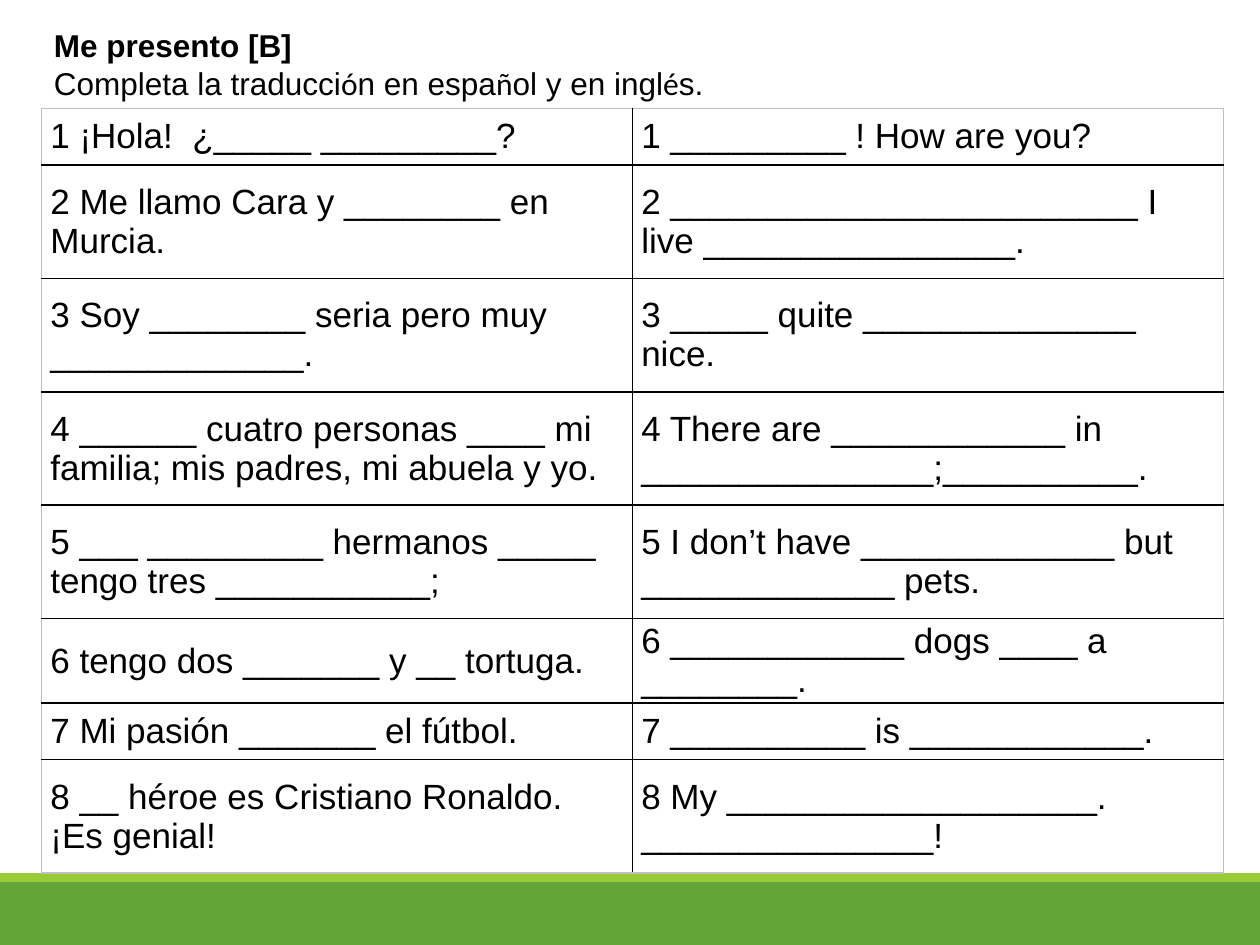
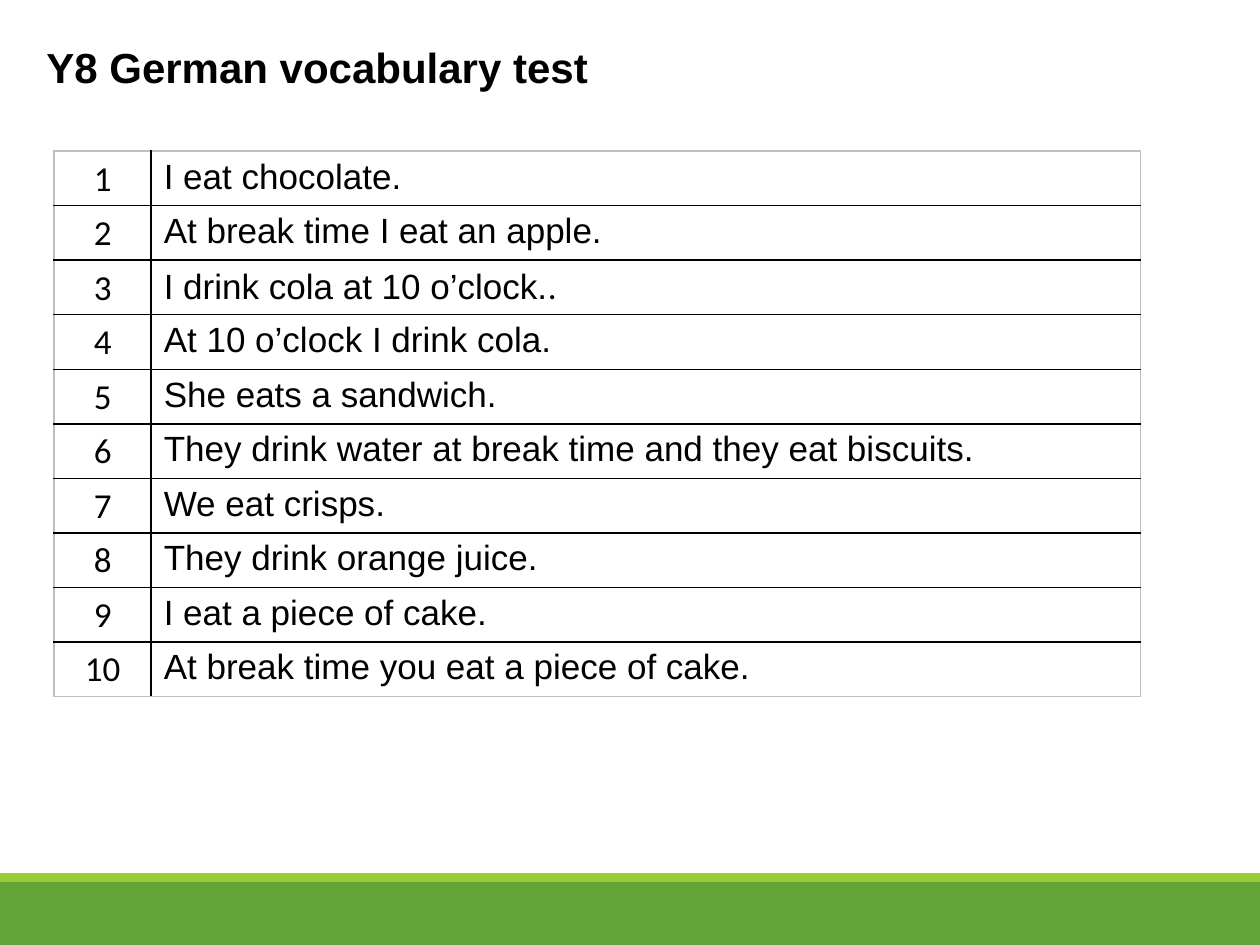
from lxml import etree
from pptx import Presentation
from pptx.dml.color import RGBColor
from pptx.enum.shapes import MSO_SHAPE
from pptx.enum.text import MSO_ANCHOR, MSO_AUTO_SIZE, PP_ALIGN
from pptx.oxml.ns import qn
from pptx.util import Inches, Pt

RECT = MSO_SHAPE.RECTANGLE
TOP, MIDDLE = MSO_ANCHOR.TOP, MSO_ANCHOR.MIDDLE
LEFT, CENTER = PP_ALIGN.LEFT, PP_ALIGN.CENTER
FIT_SHAPE = MSO_AUTO_SIZE.SHAPE_TO_FIT_TEXT

BLACK = RGBColor(0x00, 0x00, 0x00)
EDGE = RGBColor(0xBF, 0xBF, 0xBF)
GREEN = RGBColor(0x63, 0xA5, 0x37)
LIME = RGBColor(0x99, 0xCB, 0x38)
SANS, ALT = "Arial", "Calibri"

SENTENCES = [
    ("1 ¡Hola!  ¿_____ _________?", "1 _________ ! How are you?"),
    ("2 Me llamo Cara y ________ en Murcia.",
     "2 ________________________ I live ________________."),
    ("3 Soy ________ seria pero muy _____________.",
     "3 _____ quite ______________ nice."),
    ("4 ______ cuatro personas ____ mi familia; mis padres, mi abuela y yo.",
     "4 There are ____________ in _______________;__________."),
    ("5 ___ _________ hermanos _____ tengo tres ___________;",
     "5 I don’t have _____________ but _____________ pets."),
    ("6 tengo dos _______ y __ tortuga.", "6 ____________ dogs ____ a ________."),
    ("7 Mi pasión _______ el fútbol.", "7 __________ is ____________."),
    ("8 __ héroe es Cristiano Ronaldo.  ¡Es genial!",
     "8 My ___________________. _______________!"),
]
SENTENCE_HEIGHTS = [0.45, 0.9, 0.9, 0.9, 0.9, 0.67, 0.45, 0.9]

INSTRUCTION = [
    ("Completa la traducci", SANS), ("ó", ALT), ("n en espa", SANS), ("ñ", ALT),
    ("ol y en ingl", SANS), ("é", ALT), ("s.", SANS),
]

VOCABULARY = [
    "I eat chocolate.",
    "At break time I eat an apple.",
    [("I drink cola at 10 o’clock.", SANS), (".", ALT)],
    "At 10 o’clock I drink cola.",
    "She eats a sandwich.",
    "They drink water at break time and they eat biscuits.",
    "We eat crisps.",
    "They drink orange juice.",
    "I eat a piece of cake.",
    "At break time you eat a piece of cake.",
]


def write(p, text, size=20, font=SANS, bold=False, align=LEFT):
    p.alignment = align
    runs = [(text, font)] if isinstance(text, str) else text
    for words, face in runs:
        r = p.add_run()
        r.text = words
        r.font.name = face
        r.font.size = Pt(size)
        r.font.bold = bold
        r.font.color.rgb = BLACK


class Deck:
    def __init__(self):
        self.prs = Presentation()
        self.prs.slide_width = Inches(10)
        self.prs.slide_height = Inches(7.5)
        self.s = None

    def slide(self):
        self.s = self.prs.slides.add_slide(self.prs.slide_layouts[6])
        self.band(7, 0.5, GREEN)
        self.band(6.93, 0.07, LIME)

    def band(self, top, height, color):
        sp = self.s.shapes.add_shape(RECT, 0, Inches(top), self.prs.slide_width, Inches(height))
        sp.shadow.inherit = False
        sp.fill.solid()
        sp.fill.fore_color.rgb = color
        sp.line.fill.background()

    def title(self, box, lines, wrap=True, anchor=TOP):
        tf = self.s.shapes.add_textbox(*map(Inches, box)).text_frame
        tf.word_wrap = wrap
        tf.auto_size = FIT_SHAPE
        tf.vertical_anchor = anchor
        for i, (text, style) in enumerate(lines):
            write(tf.add_paragraph() if i else tf.paragraphs[0], text, **style)

    def table(self, box, widths, rows, columns, margins, heights=()):
        shape = self.s.shapes.add_table(len(rows), len(widths), *map(Inches, box))
        table = shape.table
        table.first_row = table.horz_banding = False
        for column, width in zip(table.columns, widths):
            column.width = Inches(width)
        for row, height in zip(table.rows, heights):
            row.height = Inches(height)
        for i, row in enumerate(rows):
            for j, (text, (anchor, style)) in enumerate(zip(row, columns)):
                cell = table.cell(i, j)
                cell.vertical_anchor = anchor
                (cell.margin_left, cell.margin_top,
                 cell.margin_right, cell.margin_bottom) = map(Inches, margins)
                write(cell.text_frame.paragraphs[0], text, **style)
                outer = {"L": j == 0, "R": j == len(widths) - 1,
                         "T": i == 0, "B": i == len(rows) - 1}
                self.borders(cell, outer)
                cell.fill.background()

    def borders(self, cell, outer):
        props = cell._tc.get_or_add_tcPr()
        for side, is_outer in outer.items():
            line = etree.SubElement(props, qn(f"a:ln{side}"), w=str(Pt(1)))
            fill = etree.SubElement(line, qn("a:solidFill"))
            color = EDGE if is_outer else BLACK
            etree.SubElement(fill, qn("a:srgbClr"), val=str(color))


def main():
    deck = Deck()

    deck.slide()
    deck.table((0.33, 0.86, 9.38, 6.07), [4.69, 4.69], SENTENCES,
               [(MIDDLE, {})] * 2, (0.07, 0, 0.07, 0), SENTENCE_HEIGHTS)
    deck.title((0.33, 0.15, 5.41, 0.71),
               [("Me presento [B]", {"size": 18, "bold": True}),
                (INSTRUCTION, {"size": 18})], wrap=False, anchor=MIDDLE)

    deck.slide()
    deck.title((0.27, 0.28, 5.2, 0.51),
               [("Y8 German vocabulary test", {"size": 24, "bold": True})])
    numbered = [(str(n), text) for n, text in enumerate(VOCABULARY, 1)]
    deck.table((0.43, 1.2, 8.62, 4.33), [0.77, 7.85], numbered,
               [(MIDDLE, {"font": ALT, "align": CENTER}), (TOP, {})],
               (0.1, 0.05, 0.1, 0.04))

    deck.prs.save("out.pptx")


if __name__ == "__main__":
    main()
